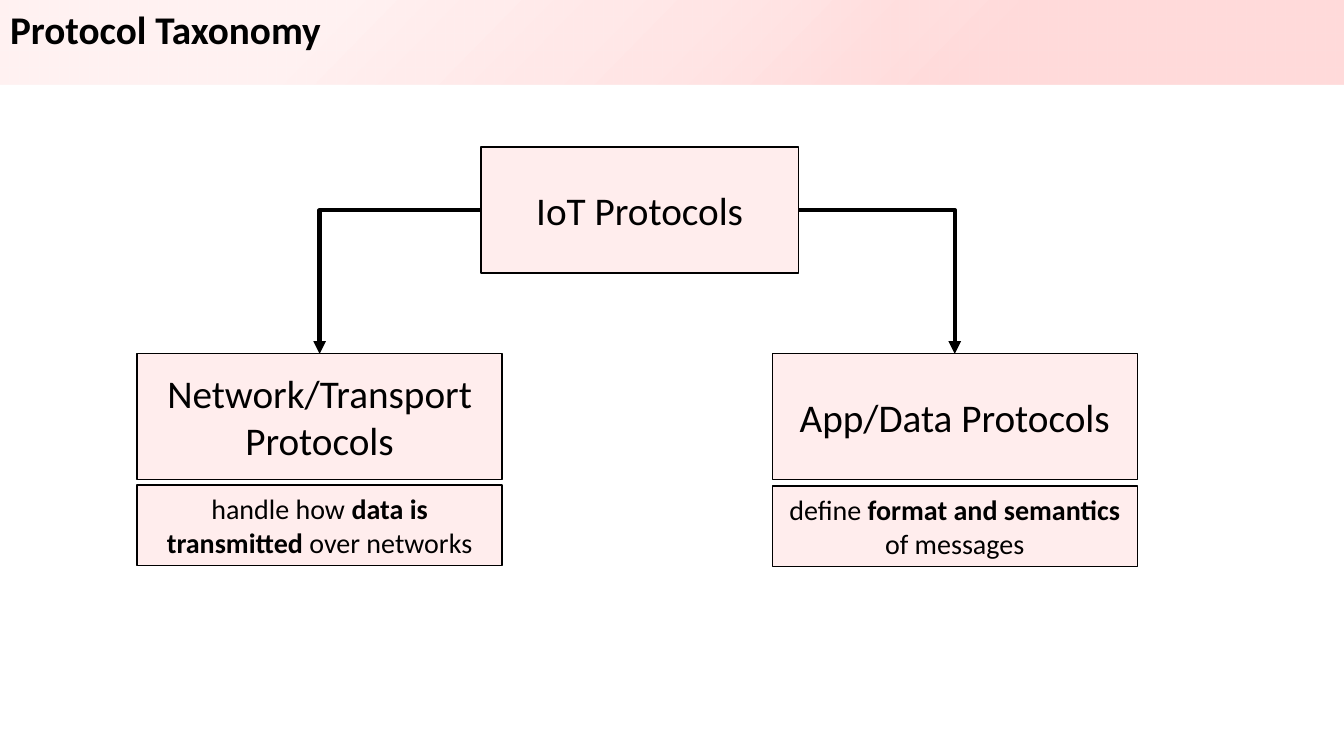
"""Build the protocol taxonomy slide: one root box and two described branches."""
import lxml.etree
import pptx
import pptx.dml.color
import pptx.enum.shapes
import pptx.enum.text
import pptx.oxml
import pptx.oxml.ns
import pptx.util

COLORS = {"ink": "000000", "box": "FFEDED", "band": "FF0000"}
FONT = "Calibri"
BAND_FILL = """<a:gradFill xmlns:a="http://schemas.openxmlformats.org/drawingml/2006/main" rotWithShape="1">
<a:gsLst>
<a:gs pos="26000"><a:srgbClr val="{color}"><a:alpha val="14000"/></a:srgbClr></a:gs>
<a:gs pos="76000"><a:srgbClr val="{color}"><a:alpha val="5000"/></a:srgbClr></a:gs>
</a:gsLst>
<a:path path="circle"><a:fillToRect l="100000" t="100000"/></a:path>
</a:gradFill>"""


class TaxonomyPage:
    """Draw styled elements; lengths are percentages of the slide's size."""

    def __init__(self, deck):
        self.deck = deck
        self.page = deck.slides.add_slide(deck.slide_layouts[5])

    def across(self, share):
        return round(self.deck.slide_width * share / 100)

    def down(self, share):
        return round(self.deck.slide_height * share / 100)

    def color(self, name):
        return pptx.dml.color.RGBColor.from_string(COLORS[name])

    def style(self, span, size, bold=False):
        span.font.name = FONT
        span.font.size = pptx.util.Pt(size)
        span.font.bold = bold
        span.font.color.rgb = self.color("ink")

    def title(self, text, height):
        band = self.page.shapes.title
        band.left, band.top = 0, 0
        band.width, band.height = self.deck.slide_width, self.down(height)
        band.fill.background()
        empty_fill = band.element.spPr.find(pptx.oxml.ns.qn("a:noFill"))
        gradient = pptx.oxml.parse_xml(BAND_FILL.format(color=COLORS["band"]))
        band.element.spPr.replace(empty_fill, gradient)
        frame = band.text_frame
        frame.text = text
        frame.word_wrap = True
        frame.auto_size = pptx.enum.text.MSO_AUTO_SIZE.SHAPE_TO_FIT_TEXT
        frame.vertical_anchor = pptx.enum.text.MSO_ANCHOR.TOP
        para = frame.paragraphs[0]
        para.alignment = pptx.enum.text.PP_ALIGN.LEFT
        self.style(para.runs[0], 28, True)

    def box(self, left, top, width, height, spans, size):
        box = self.page.shapes.add_shape(
            pptx.enum.shapes.MSO_SHAPE.RECTANGLE,
            self.across(left), self.down(top), self.across(width), self.down(height))
        box.shadow.inherit = False
        box.fill.solid()
        box.fill.fore_color.rgb = self.color("box")
        box.line.color.rgb = self.color("ink")
        box.line.width = pptx.util.Pt(1)
        frame = box.text_frame
        frame.word_wrap = True
        frame.vertical_anchor = pptx.enum.text.MSO_ANCHOR.MIDDLE
        para = frame.paragraphs[0]
        para.alignment = pptx.enum.text.PP_ALIGN.CENTER
        for text, bold in spans:
            span = para.add_run()
            span.text = text
            self.style(span, size, bold)
        return box

    def elbow(self, start, side, end):
        arrow = self.page.shapes.add_connector(
            pptx.enum.shapes.MSO_CONNECTOR.ELBOW, 0, 0, 0, 0)
        arrow.begin_connect(start, side)
        arrow.end_connect(end, 0)
        arrow.line.color.rgb = self.color("ink")
        arrow.line.width = pptx.util.Pt(3)
        qn = pptx.oxml.ns.qn
        properties = arrow.element.spPr
        properties.find(qn("a:prstGeom")).set("prst", "bentConnector2")
        outline = properties.find(qn("a:ln"))
        lxml.etree.SubElement(outline, qn("a:tailEnd"), type="triangle")
        lxml.etree.SubElement(properties, qn("a:effectLst"))


def main():
    deck = pptx.Presentation()
    deck.slide_width = pptx.util.Inches(13.33)
    deck.slide_height = pptx.util.Inches(7.5)
    page = TaxonomyPage(deck)
    page.title("Protocol Taxonomy", 7.6)
    root = page.box(35.78, 19.47, 23.63, 16.67, [("IoT Protocols", False)], 28)
    branches = [
        (10.2, 1, "Network/Transport Protocols", 64.13,
         [("handle how ", False), ("data is transmitted ", True), ("over networks", False)]),
        (57.46, 3, "App/Data Protocols", 64.27,
         [("define ", False), ("format and semantics", True), (" of messages", False)]),
    ]
    for left, side, name, note_top, note in branches:
        branch = page.box(left, 46.8, 27.16, 16.67, [(name, False)], 28)
        page.elbow(root, side, branch)
        page.box(left, note_top, 27.16, 10.67, note, 20)
    deck.save("out.pptx")


if __name__ == "__main__":
    main()
